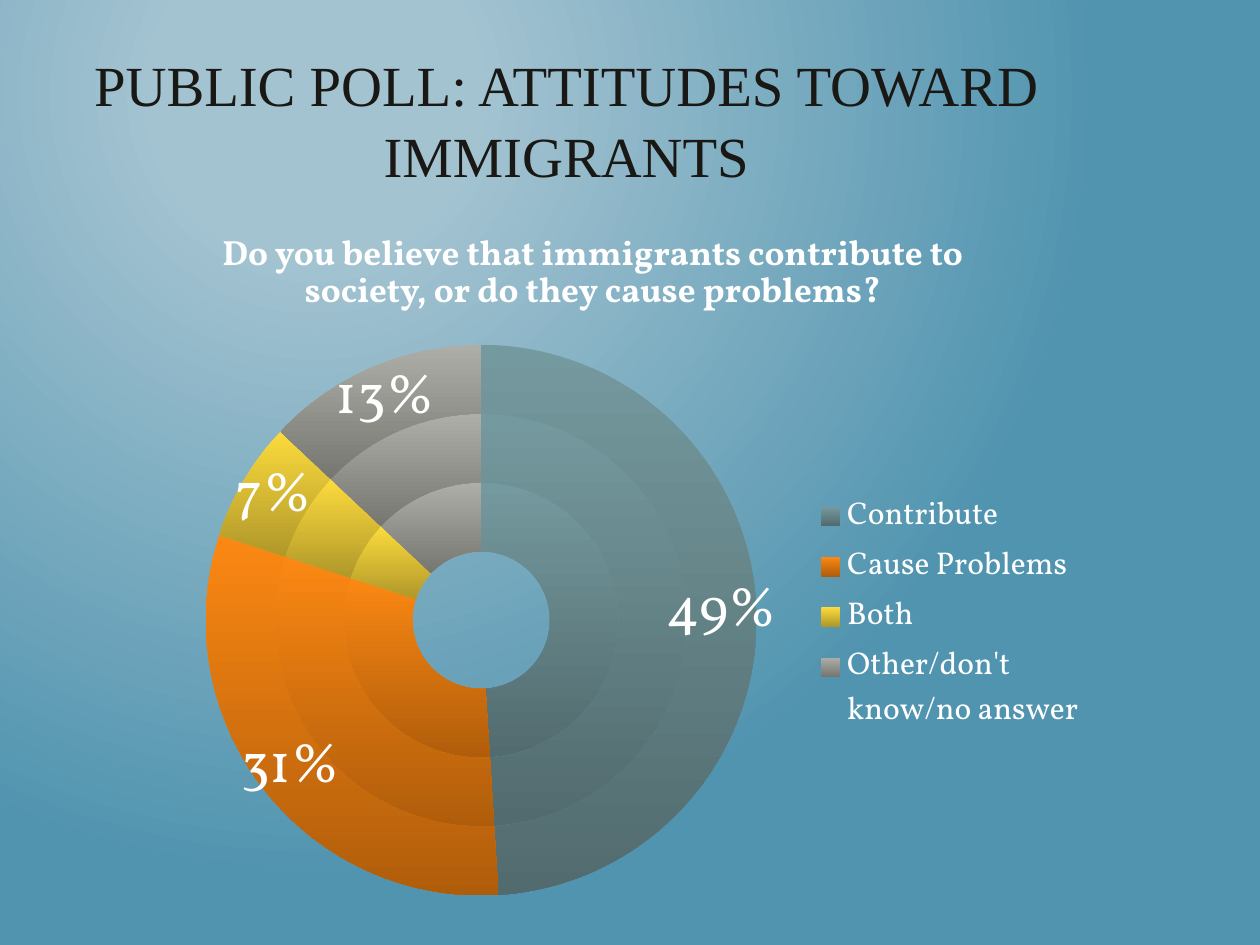
from lxml import etree
from pptx import Presentation
from pptx import util as u
from pptx.chart.data import CategoryChartData
from pptx.dml.color import RGBColor
from pptx.enum import chart as charts, text
from pptx.oxml import parse_xml
from pptx.oxml.ns import nsdecls, qn

COLOURS = {
    "glow": "A3C3D1", "water": "5194AF", "ink": "191814", "white": "FFFFFF",
    "slate": "74999E", "slate_dark": "526B6E",
    "orange": "FB8813", "orange_dark": "B05D0B",
    "yellow": "FCDB3D", "yellow_dark": "B0982A",
    "grey": "AEAEA8", "grey_dark": "777772",
}
POLL = {"Contribute": (49, "slate"), "Cause Problems": (31, "orange"),
        "Both": (7, "yellow"), "Other/don't know/no answer": (13, "grey")}
RINGS = 3


def colour(name):
    return RGBColor.from_string(COLOURS[name])


def assign(target, values):
    for name, value in values.items():
        setattr(target, name, value)


class PollDeck:
    def __init__(self, width, height):
        self.deck = Presentation()
        assign(self.deck, {"slide_width": u.Inches(width),
                           "slide_height": u.Inches(height)})
        self.page = self.deck.slides.add_slide(self.deck.slide_layouts[6])
        self.font = "Vollkorn"

    def style(self, font, size, shade, name=None, bold=False):
        assign(font, {"name": name or self.font, "size": u.Pt(size), "bold": bold})
        font.color.rgb = colour(shade)

    def gradient(self, fill, start, end):
        fill.gradient()
        for stop, shade in zip(fill.gradient_stops, (start, end)):
            stop.color.rgb = colour(shade)

    def background(self, start, end):
        fill = self.page.background.fill
        self.gradient(fill, start, end)
        fill.gradient_stops[0].position = 0.2
        linear = next(self.page.element.iter(qn("a:lin")))
        linear.getparent().replace(linear, parse_xml(
            f'<a:path {nsdecls("a")} path="circle">'
            '<a:fillToRect l="50000" t="20000" r="100000" b="100000"/></a:path>'))

    def text(self, wording, area, size, shade, frame_values, spacing, **font):
        box = self.page.shapes.add_textbox(*map(u.Inches, area))
        assign(box.text_frame, {"word_wrap": True, **frame_values})
        para = box.text_frame.paragraphs[0]
        assign(para, {"alignment": text.PP_ALIGN.CENTER, "line_spacing": spacing})
        span = para.add_run()
        span.text = wording
        self.style(span.font, size, shade, **font)

    def place(self, parent, after, area, inner=False):
        for old in parent.findall(qn("c:layout")):
            parent.remove(old)
        layout = etree.Element(qn("c:layout"))
        manual = etree.SubElement(layout, qn("c:manualLayout"))
        values = {"layoutTarget": "inner"} if inner else {}
        values.update({"xMode": "edge", "yMode": "edge"})
        values.update(zip("xywh", area))
        for tag, value in values.items():
            etree.SubElement(manual, qn(f"c:{tag}")).set("val", str(value))
        if after is None:
            parent.insert(0, layout)
        else:
            after.addnext(layout)

    def doughnut(self, poll, rings, area):
        data = CategoryChartData()
        data.categories = list(poll)
        for ring in range(1, rings + 1):
            data.add_series(f"Series {ring}", [share for share, _ in poll.values()])
        chart = self.page.shapes.add_chart(
            charts.XL_CHART_TYPE.DOUGHNUT, *map(u.Inches, area), data).chart
        assign(chart, {"has_title": False, "has_legend": True})
        self.style(chart.font, 18, "white")
        assign(chart.legend, {"position": charts.XL_LEGEND_POSITION.RIGHT,
                              "include_in_layout": False})
        self.style(chart.legend.font, 18, "white")
        plot = chart.plots[0]
        plot.vary_by_categories = True
        for series in plot.series:
            for index, (_, shade) in enumerate(poll.values()):
                slice_format = series.points[index].format
                self.gradient(slice_format.fill, shade, f"{shade}_dark")
                slice_format.fill.gradient_angle = 270
                slice_format.line.fill.background()
        labels = plot.series[rings - 1].data_labels
        assign(labels, {"show_percentage": True, "show_value": False,
                        "number_format": "0%", "number_format_is_linked": False})
        self.style(labels.font, 32, "white")
        root = chart.element
        next(root.iter(qn("c:holeSize"))).set("val", "50")
        self.place(next(root.iter(qn("c:plotArea"))), None,
                   (0.05, 0.05, 0.57, 0.92), inner=True)
        legend = next(root.iter(qn("c:legend")))
        self.place(legend, legend.find(qn("c:legendPos")), (0.68, 0.29, 0.28, 0.42))


def main():
    poll = PollDeck(10, 7.5)
    poll.background("glow", "water")
    poll.doughnut(POLL, RINGS, (1.25, 2.5, 7.67, 4.75))
    poll.text("PUBLIC POLL: ATTITUDES TOWARD IMMIGRANTS", (0.33, 0.42, 8.33, 1.25),
              32.4, "ink", {"vertical_anchor": text.MSO_ANCHOR.MIDDLE,
                            "margin_bottom": u.Inches(0.27)},
              1.04, name="Times New Roman")
    poll.text("Do you believe that immigrants contribute to society, "
              "or do they cause problems?", (1.33, 1.83, 6.75, 0.77),
              20, "white", {"auto_size": text.MSO_AUTO_SIZE.SHAPE_TO_FIT_TEXT},
              0.87, bold=True)
    poll.deck.save("out.pptx")


if __name__ == "__main__":
    main()
